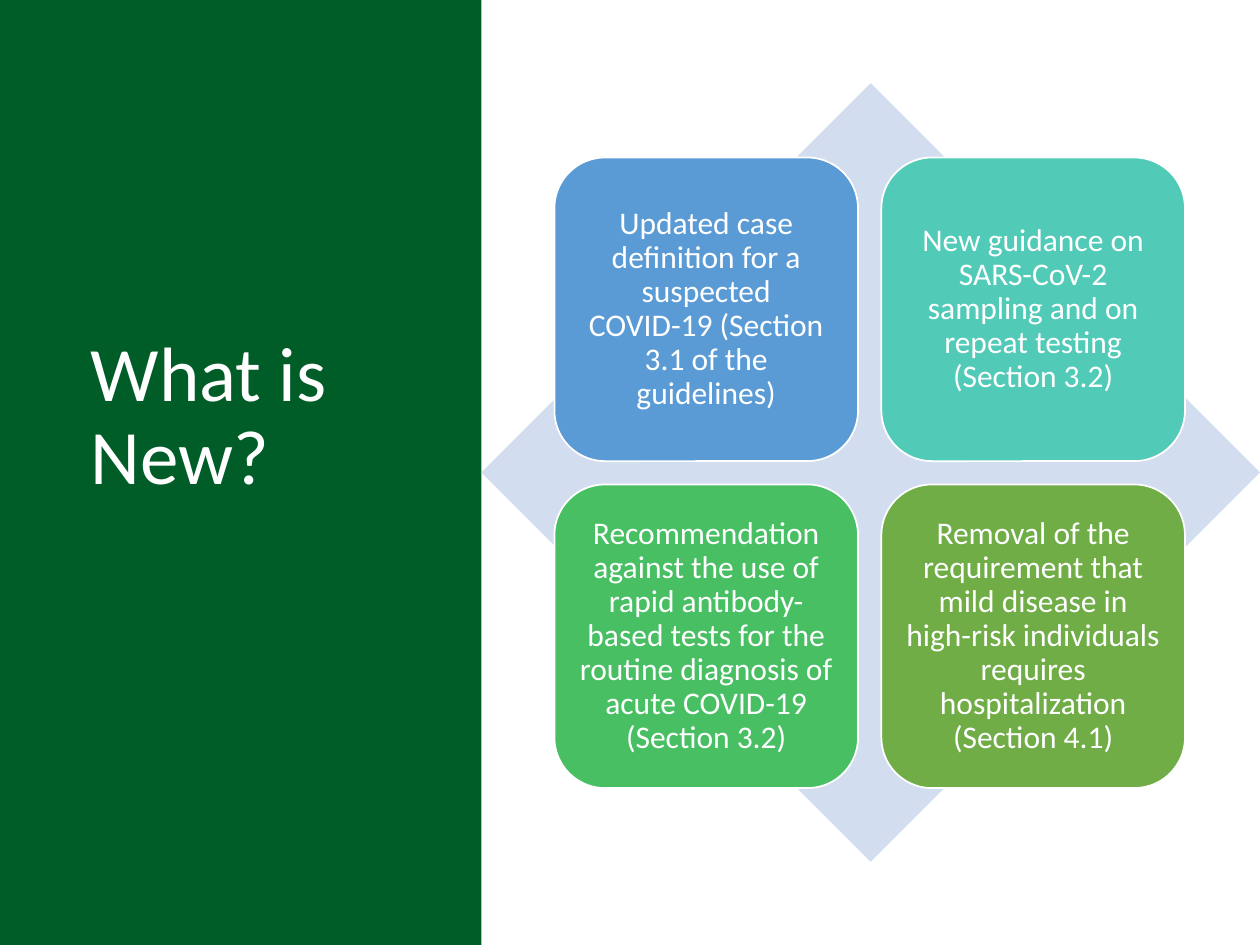
from dataclasses import dataclass

from pptx import Presentation
from pptx import util as u
from pptx.dml.color import RGBColor
from pptx.enum import shapes, text

FONT = "Calibri"
WHITE = "FFFFFF"
CARD_SIZE = 2.41
CARD_LEFT, CARD_TOP = 4.4, 1.25
CARD_STEP = 2.595


@dataclass
class Card:
    message: str
    color: str


CARDS = [
    Card("Updated case definition for a suspected COVID-19 (Section 3.1 of the guidelines)", "5B9BD5"),
    Card("New guidance on SARS-CoV-2 sampling and on repeat testing (Section 3.2)", "52CAB8"),
    Card(
        "Recommendation against the use of rapid antibody-based tests for the "
        "routine diagnosis of acute COVID-19 (Section 3.2)",
        "49BF64",
    ),
    Card(
        "Removal of the requirement that mild disease in high-risk individuals "
        "requires hospitalization (Section 4.1)",
        "70AD47",
    ),
]


def rgb(color: str) -> RGBColor:
    return RGBColor.from_string(color)


def add_block(slide, kind, left: float, top: float, width: float, height: float, color: str):
    shape = slide.shapes.add_shape(
        kind, u.Inches(left), u.Inches(top), u.Inches(width), u.Inches(height)
    )
    shape.shadow.inherit = False
    shape.fill.solid()
    shape.fill.fore_color.rgb = rgb(color)
    shape.line.fill.background()
    return shape


def write_text(shape, content: str, size: int, alignment, inset_x: float, inset_y: float) -> None:
    frame = shape.text_frame
    frame.word_wrap = True
    frame.auto_size = text.MSO_AUTO_SIZE.NONE
    frame.vertical_anchor = text.MSO_ANCHOR.MIDDLE
    frame.margin_left = frame.margin_right = u.Inches(inset_x)
    frame.margin_top = frame.margin_bottom = u.Inches(inset_y)
    paragraph = frame.paragraphs[0]
    paragraph.alignment = alignment
    paragraph.line_spacing = 0.9
    paragraph.space_before = u.Pt(0)
    run = paragraph.add_run()
    run.text = content
    run.font.name = FONT
    run.font.size = u.Pt(size)
    run.font.color.rgb = rgb(WHITE)


def add_title(slide, content: str) -> None:
    title = slide.shapes.title
    title.left, title.top = u.Inches(0.62), u.Inches(0.61)
    title.width, title.height = u.Inches(2.93), u.Inches(5.42)
    write_text(title, content, 44, text.PP_ALIGN.LEFT, 0.1, 0.05)


def add_card(slide, card: Card, row: int, column: int) -> None:
    shape = add_block(
        slide,
        shapes.MSO_SHAPE.ROUNDED_RECTANGLE,
        CARD_LEFT + column * CARD_STEP,
        CARD_TOP + row * CARD_STEP,
        CARD_SIZE,
        CARD_SIZE,
        card.color,
    )
    shape.line.color.rgb = rgb(WHITE)
    shape.line.width = u.Pt(1)
    write_text(shape, card.message, 18, text.PP_ALIGN.CENTER, 0.07, 0.07)


def main() -> None:
    presentation = Presentation()
    presentation.slide_width = u.Inches(10)
    presentation.slide_height = u.Inches(7.5)
    slide = presentation.slides.add_slide(presentation.slide_layouts[5])

    panel = add_block(slide, shapes.MSO_SHAPE.RECTANGLE, 0, 0, 3.82, 7.5, "005D28")
    slide.shapes.title.element.addprevious(panel.element)
    add_title(slide, "What is New?")

    add_block(slide, shapes.MSO_SHAPE.DIAMOND, 3.82, 0.66, 6.18, 6.18, "D2DEEF")
    for index, card in enumerate(CARDS):
        row, column = divmod(index, 2)
        add_card(slide, card, row, column)

    presentation.save("out.pptx")


if __name__ == "__main__":
    main()
